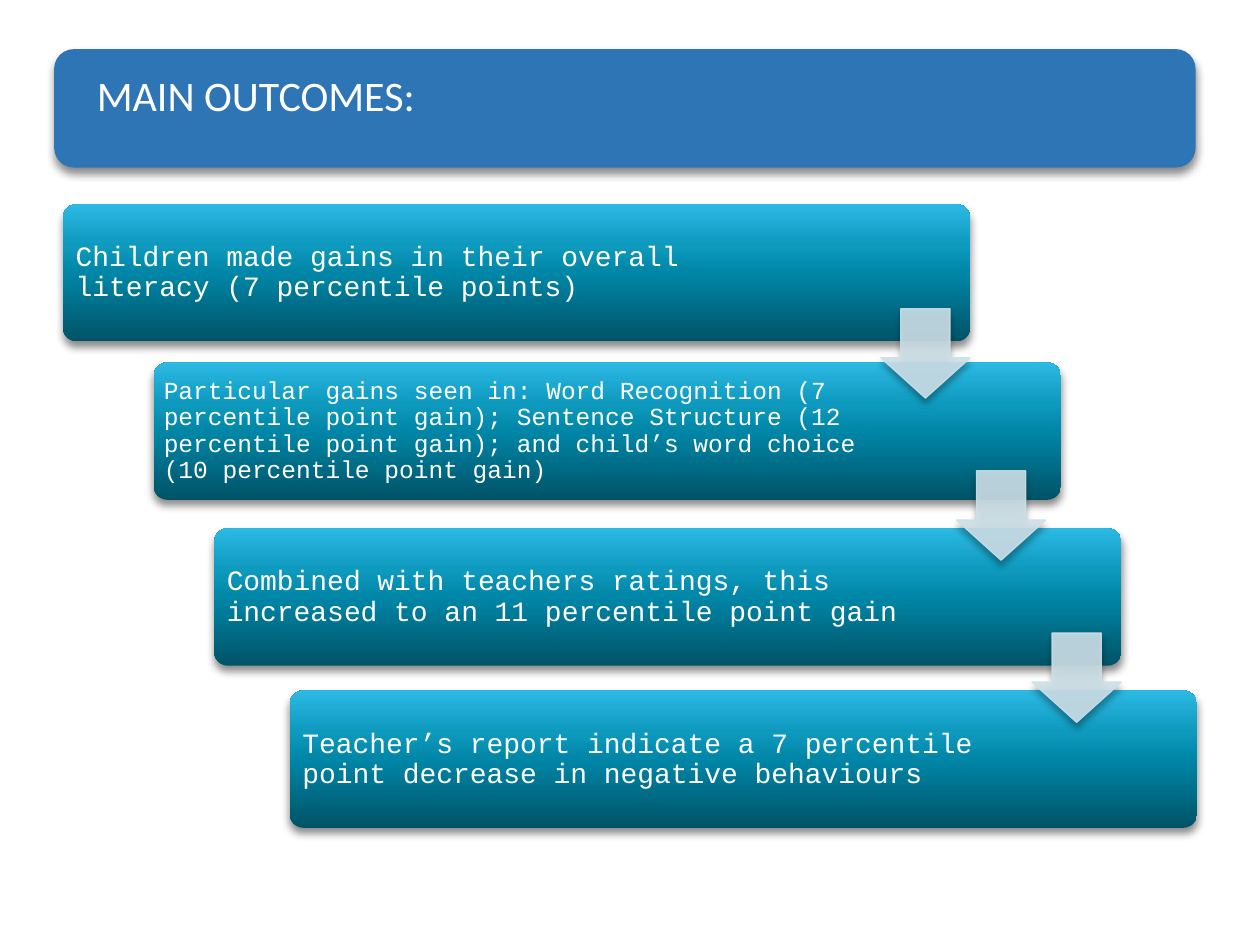
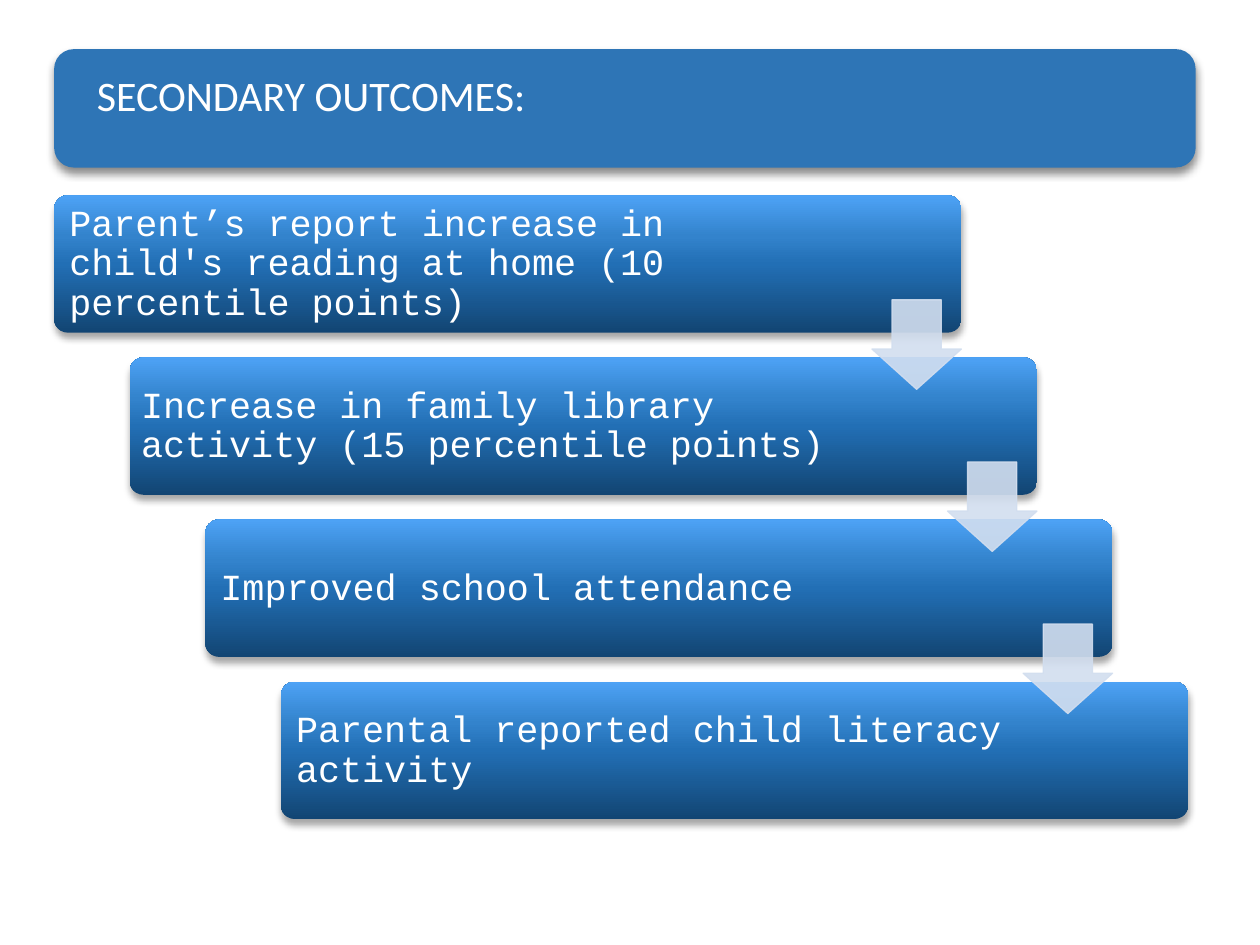
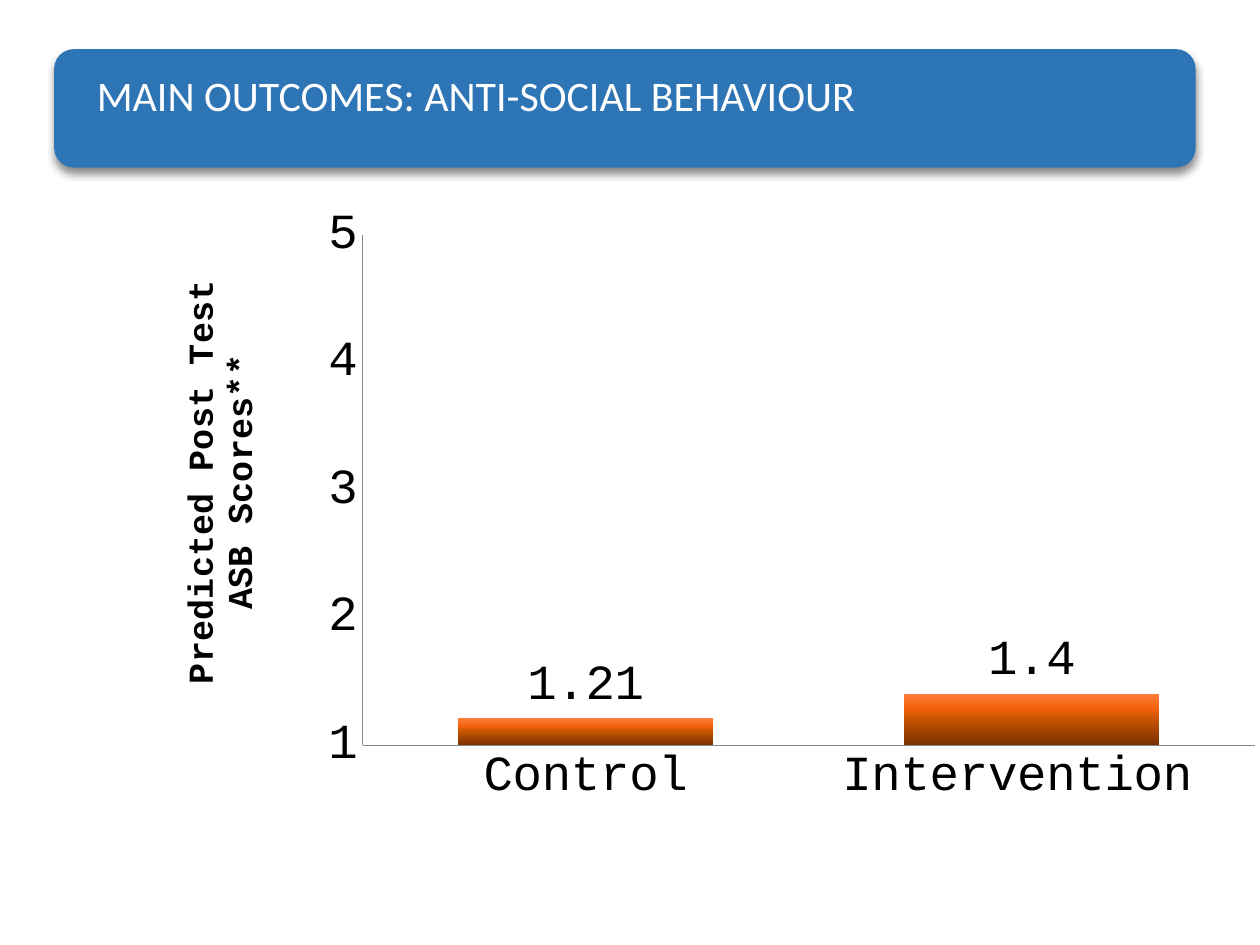
from lxml import etree
from pptx import Presentation
from pptx import util as u
from pptx.chart import data as chart_data
from pptx.dml import color as dml
from pptx.enum import chart as charts, shapes, text
from pptx.oxml import ns

TITLE_FONT, BODY_FONT = "Calibri", "Courier New"
BAND, WHITE, BLACK, AXIS = "2E75B6", "FFFFFF", "000000", "868686"
POSITIONS = (0, 50, 70, 100)
TEAL = ("005367", "0086A7", "0E9ABE", "2CB9E3")
BLUE = ("124573", "226FB5", "3383CC", "4DA2F5")
ORANGE = ("783000", "C45200", "F06008", "FF7D38")
DEEP_SHADOW, SOFT_SHADOW = (45, 5, 3), (35, 4, 3)
STEP_X, STEP_Y = 0.6, 3.86 / 3
BAR_WIDTH, BAR_HEIGHT = 7.2, 1.09
ARROW_SIZE = 0.71


def rgb(value):
    return dml.RGBColor.from_string(value)


def lengths(*values):
    return [u.Inches(value) for value in values]


def child(parent, tag, **attributes):
    values = {name: str(value) for name, value in attributes.items()}
    return etree.SubElement(parent, ns.qn(tag), values)


def set_shadow(shape, shadow):
    shape.shadow.inherit = False
    if not shadow:
        return
    opacity, blur, distance = shadow
    effects = shape._element.spPr.find(ns.qn("a:effectLst"))
    outer = child(effects, "a:outerShdw", blurRad=u.Pt(blur), dist=u.Pt(distance),
                  dir=5400000, rotWithShape=0)
    tint = child(outer, "a:srgbClr", val=BLACK)
    child(tint, "a:alpha", val=opacity * 1000)


def set_gradient(fill, element, colours):
    fill.gradient()
    fill.gradient_angle = 90
    stops = element.find(".//" + ns.qn("a:gsLst"))
    for stop in list(stops):
        stops.remove(stop)
    for position, colour in zip(POSITIONS, colours):
        stop = child(stops, "a:gs", pos=position * 1000)
        child(stop, "a:srgbClr", val=colour)


def add_shape(slide, kind, place, shadow, adjustments=()):
    shape = slide.shapes.add_shape(kind, *lengths(*place))
    for index, value in enumerate(adjustments):
        shape.adjustments[index] = value
    shape.line.fill.background()
    set_shadow(shape, shadow)
    return shape


def set_font(font, size, name=BODY_FONT, colour=BLACK, bold=False):
    font.size, font.name, font.bold = u.Pt(size), name, bold
    font.color.rgb = rgb(colour)


def add_text(slide, words, place, size, name=BODY_FONT, colour=WHITE,
             anchor=text.MSO_ANCHOR.MIDDLE, insets=(0.07, 0.07), spacing=0.9):
    box = slide.shapes.add_textbox(*lengths(*place))
    frame = box.text_frame
    frame.word_wrap = True
    frame.vertical_anchor = anchor
    frame.margin_left = frame.margin_right = u.Inches(insets[0])
    frame.margin_top = frame.margin_bottom = u.Inches(insets[1])
    para = frame.paragraphs[0]
    para.line_spacing = spacing
    span = para.add_run()
    span.text = words
    set_font(span.font, size, name, colour)


def add_title_slide(deck, title):
    slide = deck.slides.add_slide(deck.slide_layouts[6])
    band = add_shape(slide, shapes.MSO_SHAPE.ROUNDED_RECTANGLE,
                     (0.43, 0.39, 9.06, 0.94), DEEP_SHADOW)
    band.fill.solid()
    band.fill.fore_color.rgb = rgb(BAND)
    add_text(slide, title, (0.67, 0.5, 8.9, 0.73), 24, name=TITLE_FONT,
             anchor=text.MSO_ANCHOR.TOP, insets=(0.1, 0.05), spacing=1.0)
    return slide


def add_step(slide, words, left, top, colours, shadow, size, inset, text_width):
    bar = add_shape(slide, shapes.MSO_SHAPE.ROUNDED_RECTANGLE,
                    (left, top, BAR_WIDTH, BAR_HEIGHT), shadow, (0.1,))
    set_gradient(bar.fill, bar._element, colours)
    add_text(slide, words, (left + 0.03, top + 0.03, text_width, 1.03), size,
             insets=(inset, inset))


def add_arrow(slide, left, top, colour, shadow):
    arrow = add_shape(slide, shapes.MSO_SHAPE.DOWN_ARROW,
                      (left, top, ARROW_SIZE, ARROW_SIZE), shadow, (0.55, 0.45))
    arrow.line.width = u.Pt(0.75)
    for fill in (arrow.fill, arrow.line.fill):
        fill.solid()
        fill.fore_color.rgb = rgb(colour)
    for tint in arrow._element.spPr.findall(".//" + ns.qn("a:solidFill") + "/" + ns.qn("a:srgbClr")):
        child(tint, "a:alpha", val=90000)


def add_staircase(slide, steps, left, top, colours, shadow, arrow_colour, arrow_shadow):
    for index, (words, size, inset, shift_x, shift_y) in enumerate(steps):
        add_step(slide, words, left + index * STEP_X + shift_x,
                 top + index * STEP_Y + shift_y, colours, shadow, size, inset,
                 5.83 if index else 5.93)
    for index in range(len(steps) - 1):
        add_arrow(slide, left + BAR_WIDTH - ARROW_SIZE + index * STEP_X,
                  top + 0.83 + index * STEP_Y, arrow_colour, arrow_shadow)


def set_layout(parent, index, **values):
    for old in parent.findall(ns.qn("c:layout")):
        parent.remove(old)
    layout = etree.Element(ns.qn("c:layout"))
    parent.insert(index, layout)
    manual = child(layout, "c:manualLayout")
    for tag, value in values.items():
        child(manual, "c:" + tag, val=value)


def style_axis(axis):
    axis.major_tick_mark = axis.minor_tick_mark = charts.XL_TICK_MARK.NONE
    axis.has_major_gridlines = False
    axis.format.line.color.rgb = rgb(AXIS)
    axis.format.line.width = u.Pt(0.75)
    set_font(axis.tick_labels.font, 28)


def add_score_chart(slide):
    scores = chart_data.CategoryChartData()
    scores.categories = ["Control", "Intervention "]
    scores.add_series("Series 1", (1.21, 1.4))
    chart = slide.shapes.add_chart(charts.XL_CHART_TYPE.COLUMN_CLUSTERED,
                                   *lengths(1.14, 1.55, 9, 4.95), scores).chart
    chart.has_legend = chart.has_title = False
    set_font(chart.font, 10)
    style_axis(chart.category_axis)

    axis = chart.value_axis
    style_axis(axis)
    axis.minimum_scale, axis.maximum_scale, axis.major_unit = 1, 5, 1
    title = axis.axis_title
    title.text_frame.text = "Predicted Post Test\nASB Scores**"
    for para in title.text_frame.paragraphs:
        set_font(para.runs[0].font, 20, bold=True)
    set_layout(title._element, 1, xMode="edge", yMode="edge", x=0.03, y=0.13)

    plot = chart.plots[0]
    plot.gap_width = 75
    plot.vary_by_categories = False
    plot.has_data_labels = True
    labels = plot.data_labels
    labels.show_value = True
    labels.position = charts.XL_LABEL_POSITION.OUTSIDE_END
    set_font(labels.font, 28)
    series = plot.series[0]
    set_gradient(series.format.fill, series._element, ORANGE)
    plot_area = chart._chartSpace.find(".//" + ns.qn("c:plotArea"))
    set_layout(plot_area, 0, layoutTarget="inner", xMode="edge", yMode="edge",
               x=0.193, y=0.064, w=0.787, h=0.818)


def main():
    deck = Presentation()
    deck.slide_width, deck.slide_height = lengths(10, 7.5)

    add_staircase(add_title_slide(deck, "MAIN OUTCOMES:"), [
        ("Children made gains in their overall literacy (7 percentile points)", 16, 0.07, 0, 0),
        ("Particular gains seen in: Word Recognition (7 percentile point gain); "
         "Sentence Structure (12 percentile point gain); and child’s word choice "
         "(10 percentile point gain)", 14, 0.05, 0.12, -0.03),
        ("Combined with teachers ratings, this increased to an 11 percentile point gain",
         16, 0.07, 0, 0),
        ("Teacher’s report indicate a 7 percentile point decrease in negative behaviours",
         16, 0.07, 0, 0),
    ], 0.5, 1.62, TEAL, DEEP_SHADOW, "CDE0E8", SOFT_SHADOW)

    add_staircase(add_title_slide(deck, "SECONDARY OUTCOMES:"), [
        ("Parent’s report increase in child's reading at home (10 percentile points)",
         21, 0.09, 0, 0),
        ("Increase in family library activity (15 percentile points)", 21, 0.06, 0, 0),
        ("Improved school attendance", 21, 0.09, 0, 0),
        ("Parental reported child literacy activity", 21, 0.09, 0, 0),
    ], 0.43, 1.55, BLUE, SOFT_SHADOW, "D2DEEF", None)

    add_score_chart(add_title_slide(deck, "MAIN OUTCOMES: ANTI-SOCIAL BEHAVIOUR"))
    deck.save("out.pptx")


if __name__ == "__main__":
    main()
